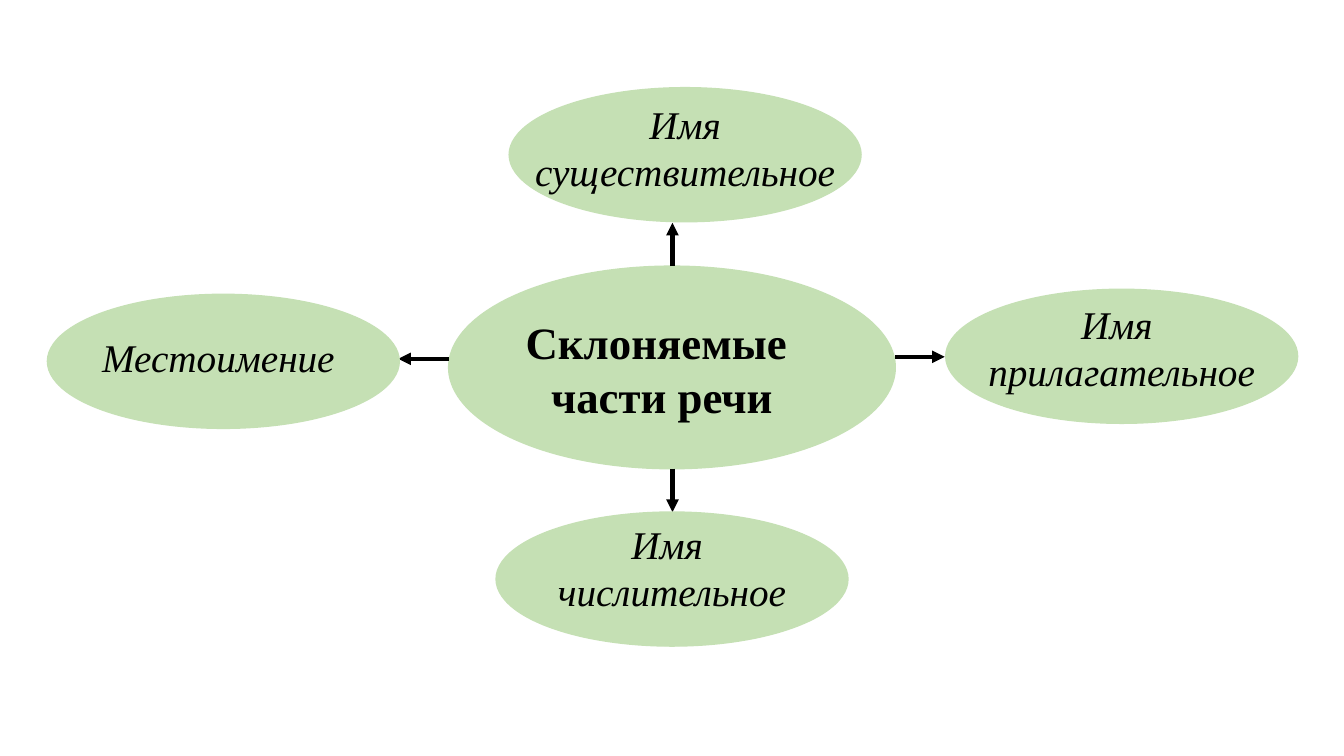
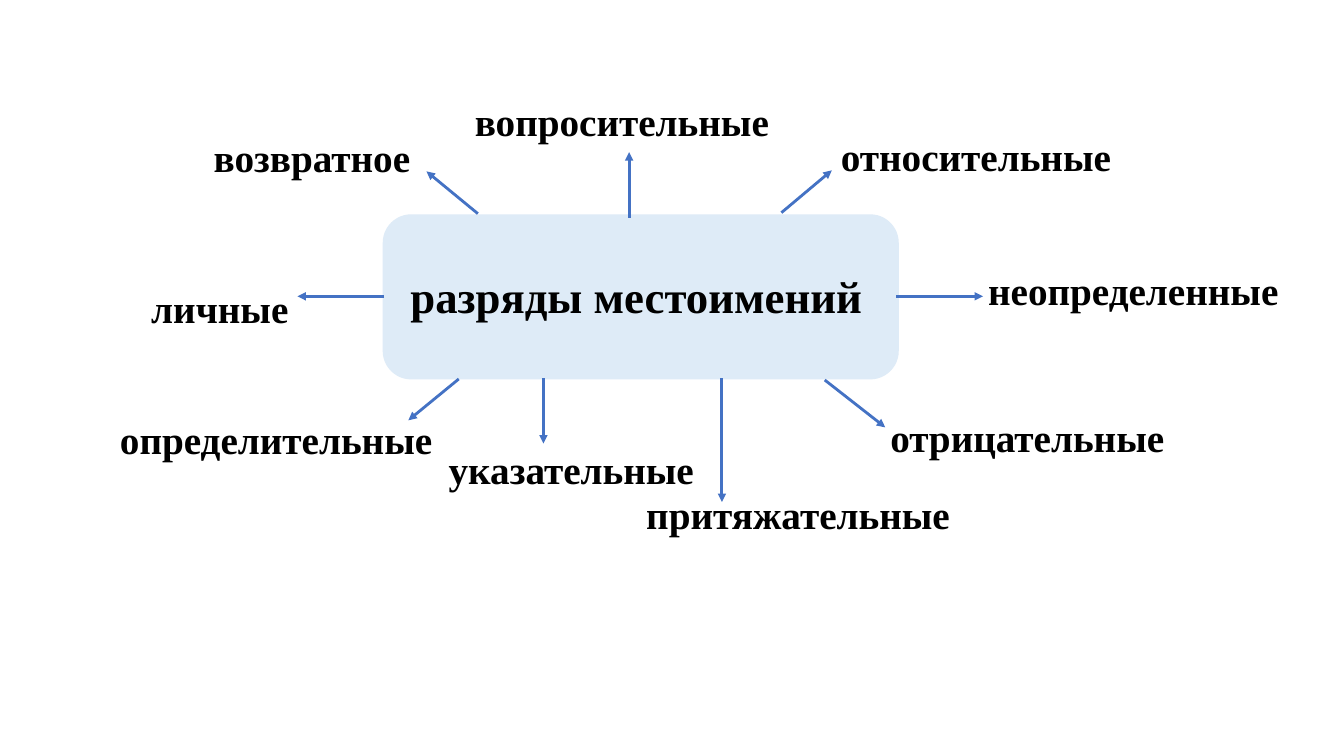
from lxml.etree import SubElement
from pptx import Presentation
from pptx.dml.color import RGBColor
from pptx.enum.shapes import MSO_CONNECTOR, MSO_SHAPE
from pptx.enum.text import PP_ALIGN
from pptx.oxml.ns import qn
from pptx.util import Inches, Pt

GREEN, PALE_BLUE, BLUE, BLACK = "C5E0B4", "DEEBF7", "4472C4", "000000"
BRANCH_FONT = {"size": Pt(28), "italic": True}
CENTRE_FONT = {"size": Pt(32), "bold": True}
CATEGORY_FONT = {"size": Pt(28), "bold": True}

OVAL_WIDTH, OVAL_HEIGHT, LABEL_WIDTH = 3.49, 1.33, 3.83
SPEECH_CENTRE = (4.45, 2.64, 4.43, 2.01)
SPEECH_TITLE = (["Склоняемые ", "части речи"], 4.65, 3.07, 1.18)
SPEECH_PARTS = [
    (["Имя существительное"], 5.05, 0.87, 0.95, 1.04),
    (["Местоимение "], 0.47, 2.92, 3.26, 0.57),
    (["Имя ", "прилагательное"], 9.38, 2.87, 2.93, 1.04),
    (["Имя ", "числительное"], 4.92, 5.08, 5.11, 1.04),
]
SPEECH_ARROWS = [
    (6.67, 2.64, 6.67, 2.21), (6.67, 4.65, 6.67, 5.08),
    (4.45, 3.56, 3.95, 3.56), (8.88, 3.54, 9.37, 3.54),
]

PRONOUN_CENTRE = (3.81, 2.14, 5.09, 1.61)
PRONOUN_TITLE = ("разряды местоимений", 4.02, 2.62, 5.09, 0.64)
PRONOUN_CATEGORIES = [
    ("вопросительные", (4.66, 0.92, 3.38), (6.24, 2.16, 6.24, 1.51)),
    ("возвратное", (2.07, 1.27, 2.33), (4.74, 2.12, 4.23, 1.70)),
    ("личные", (1.45, 2.77, 2.05), (3.81, 2.94, 2.95, 2.94)),
    ("относительные", (8.29, 1.26, 3.26), (7.75, 2.11, 8.25, 1.69)),
    ("неопределенные", (9.75, 2.59, 3.09), (8.89, 2.94, 9.75, 2.94)),
    ("отрицательные", (8.78, 4.05, 3.68), (8.18, 3.77, 8.78, 4.24)),
    ("притяжательные", (6.36, 4.82, 3.94), (7.16, 3.75, 7.16, 4.98)),
    ("указательные", (4.40, 4.37, 3.09), (5.39, 3.75, 5.39, 4.40)),
    ("определительные", (1.14, 4.07, 3.61), (4.55, 3.76, 4.05, 4.17)),
]


def colour(value):
    return RGBColor.from_string(value)


def inches(values):
    return [Inches(value) for value in values]


def add_panel(slide, kind, place, fill, line_width):
    panel = slide.shapes.add_shape(kind, *inches(place))
    panel.shadow.inherit = False
    panel.fill.solid()
    panel.fill.fore_color.rgb = panel.line.color.rgb = colour(fill)
    panel.line.width = Pt(line_width)


def add_arrow(slide, ends, line_colour, line_width):
    arrow = slide.shapes.add_connector(MSO_CONNECTOR.STRAIGHT, *inches(ends))
    arrow.line.color.rgb = colour(line_colour)
    arrow.line.width = Pt(line_width)
    properties = arrow._element.spPr
    SubElement(properties.find(qn("a:ln")), qn("a:tailEnd"), type="triangle")
    SubElement(properties, qn("a:effectLst"))


def add_label(slide, lines, place, font, align, inset):
    frame = slide.shapes.add_textbox(*inches(place)).text_frame
    margins = ("margin_left", "margin_top", "margin_right", "margin_bottom")
    for name, value in {"word_wrap": True, **dict.fromkeys(margins, Inches(inset))}.items():
        setattr(frame, name, value)
    frame.text = "\n".join(lines)
    for paragraph in frame.paragraphs:
        paragraph.alignment = align
        for run in paragraph.runs:
            run.font.color.rgb = colour(BLACK)
            for name, value in {"name": "Times New Roman", **font}.items():
                setattr(run.font, name, value)


def add_speech_label(slide, lines, left, top, height, font):
    frame = slide, lines, (left, top, LABEL_WIDTH, height), font
    add_label(*frame, PP_ALIGN.CENTER, 0.05)


def build_speech_parts(slide):
    add_panel(slide, MSO_SHAPE.OVAL, SPEECH_CENTRE, GREEN, 1)
    for ends in SPEECH_ARROWS:
        add_arrow(slide, ends, BLACK, 3)
    for lines, left, top, label_top, label_height in SPEECH_PARTS:
        add_panel(slide, MSO_SHAPE.OVAL, (left, top, OVAL_WIDTH, OVAL_HEIGHT), GREEN, 1)
        label_left = left + (OVAL_WIDTH - LABEL_WIDTH) / 2
        add_speech_label(slide, lines, label_left, label_top, label_height, BRANCH_FONT)
    add_speech_label(slide, *SPEECH_TITLE, CENTRE_FONT)


def build_pronoun_categories(slide):
    title, *title_place = PRONOUN_TITLE
    add_panel(slide, MSO_SHAPE.ROUNDED_RECTANGLE, PRONOUN_CENTRE, PALE_BLUE, 2)
    add_label(slide, [title], title_place, CENTRE_FONT, PP_ALIGN.LEFT, 0.05)
    for category, place, ends in PRONOUN_CATEGORIES:
        add_arrow(slide, ends, BLUE, 2)
        add_label(slide, [category], (*place, 0.57), CATEGORY_FONT, PP_ALIGN.LEFT, 0.05)


def main():
    """Build the slides on declinable parts of speech and pronoun categories."""
    deck = Presentation()
    deck.slide_width, deck.slide_height = inches((13.33, 7.5))
    for build in (build_speech_parts, build_pronoun_categories):
        build(deck.slides.add_slide(deck.slide_layouts[6]))
    deck.save("out.pptx")


if __name__ == "__main__":
    main()
